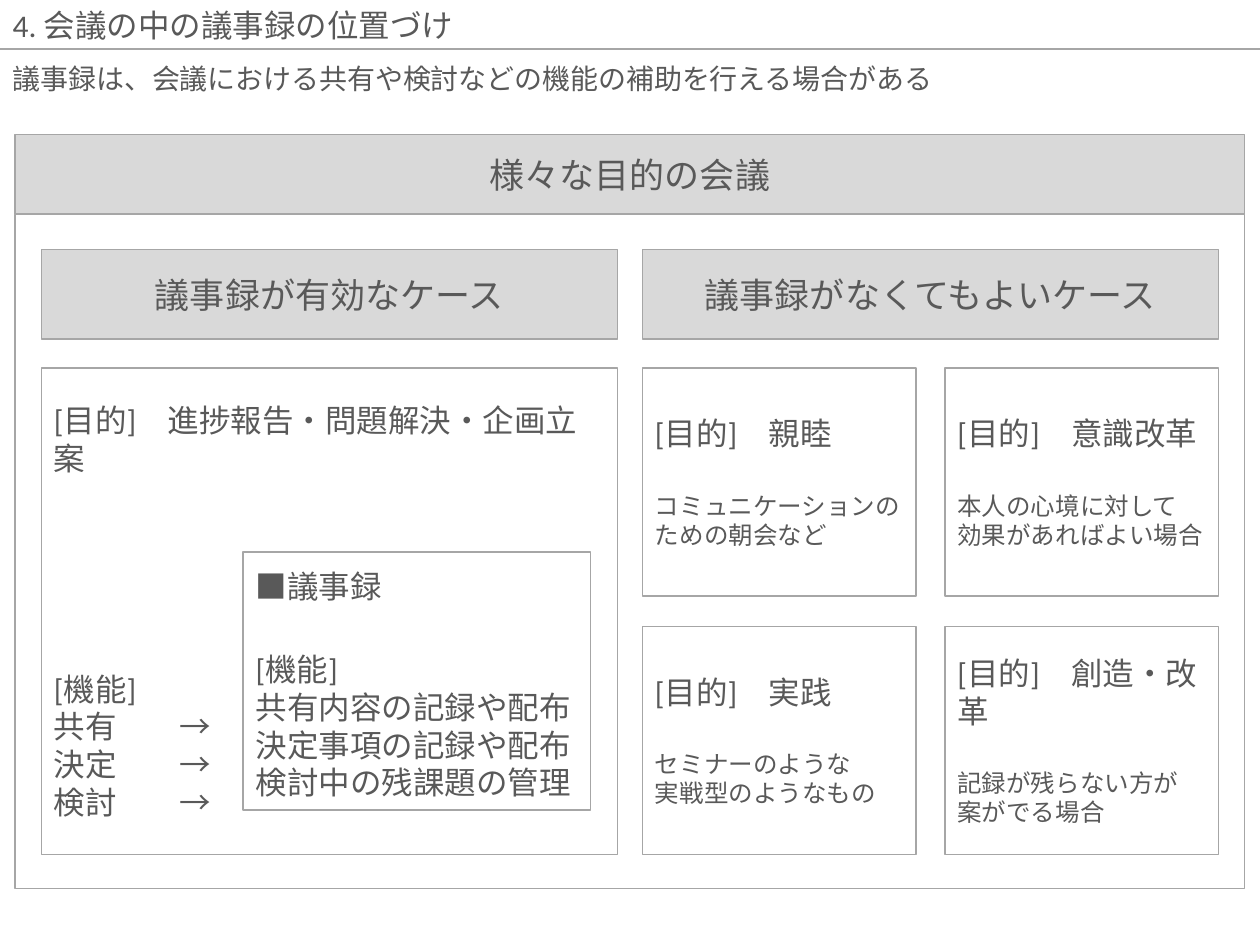
"""Build a slide on where minutes fit among meetings."""
from dataclasses import dataclass
from typing import Optional

from lxml import etree
from pptx import Presentation
from pptx import util as u
from pptx.dml.color import RGBColor
from pptx.enum import shapes, text
from pptx.oxml.ns import qn


@dataclass(frozen=True)
class Theme:
    """Colours, font and type sizes."""
    ink: RGBColor = RGBColor.from_string("595959")
    edge: RGBColor = RGBColor.from_string("A6A6A6")
    band: RGBColor = RGBColor.from_string("D9D9D9")
    font: str = "Calibri"
    head: int = 20
    main: int = 18
    lead: int = 16
    note: int = 14
    row: int = 22
    rule: float = 0.75


@dataclass(frozen=True)
class Box:
    """Place and size in inches."""
    x: float
    y: float
    w: float
    h: float


@dataclass(frozen=True)
class Line:
    """One paragraph with its size and the space above it."""
    words: str
    size: int
    gap: float = 0


@dataclass(frozen=True)
class Case:
    """A kind of meeting that needs no minutes."""
    aim: str
    notes: tuple[str, str]


T = Theme()
LEFT, RIGHT, WIDE = 0.33, 5.1, 4.57
TOP, TALL = 2.92, 3.86
CARD_W, CARD_H = 2.17, 1.81
STEP_X, STEP_Y = WIDE - CARD_W, TALL - CARD_H
HEADS = ("議事録が有効なケース", "議事録がなくてもよいケース")
TASKS = ("共有", "決定", "検討")
ROLES = ("共有内容の記録や配布", "決定事項の記録や配布", "検討中の残課題の管理")
CASES = (
    Case("親睦", ("コミュニケーションの", "ための朝会など")),
    Case("意識改革", ("本人の心境に対して", "効果があればよい場合")),
    Case("実践", ("セミナーのような", "実戦型のようなもの")),
    Case("創造・改革", ("記録が残らない方が", "案がでる場合")),
)


def place(item, box: Box) -> None:
    """Move and size a shape."""
    item.left, item.top = u.Inches(box.x), u.Inches(box.y)
    item.width, item.height = u.Inches(box.w), u.Inches(box.h)


def write(frame, lines: list[Line], align=text.PP_ALIGN.LEFT,
          anchor=text.MSO_ANCHOR.MIDDLE) -> None:
    """Fill a text frame and format its runs."""
    frame.text = "\n".join(line.words for line in lines)
    frame.word_wrap = True
    frame.auto_size = text.MSO_AUTO_SIZE.NONE
    frame.vertical_anchor = anchor
    for para, line in zip(frame.paragraphs, lines):
        para.alignment = align
        para.space_before = u.Pt(line.gap)
        for run in para.runs:
            run.font.name = T.font
            run.font.size = u.Pt(line.size)
            run.font.color.rgb = T.ink


def panel(slide, box: Box, fill: Optional[RGBColor] = None):
    """Draw an outlined rectangle."""
    rect = slide.shapes.add_shape(shapes.MSO_SHAPE.RECTANGLE, 0, 0, 0, 0)
    place(rect, box)
    rect.shadow.inherit = False
    rect.line.color.rgb = T.edge
    rect.line.width = u.Pt(T.rule)
    if fill is None:
        rect.fill.background()
    else:
        rect.fill.solid()
        rect.fill.fore_color.rgb = fill
    return rect


def banner(slide, box: Box, words: str) -> None:
    """Draw a shaded heading."""
    rect = panel(slide, box, T.band)
    write(rect.text_frame, [Line(words, T.head)], text.PP_ALIGN.CENTER)


def card(slide, box: Box, case: Case) -> None:
    """Draw one case with its aim and notes."""
    first, last = case.notes
    write(panel(slide, box).text_frame, [
        Line(f"[目的]\u3000{case.aim}".replace("\u3000", "　"), T.main),
        Line(first, T.note, T.row), Line(last, T.note)])


def header(slide) -> None:
    """Set the title, the lead sentence and the rule between them."""
    title, body = slide.shapes.title, slide.placeholders[1]
    place(title, Box(0, 0, 10, 0.39))
    write(title.text_frame, [Line("4. 会議の中の議事録の位置づけ", T.main)])
    place(body, Box(0, 0.39, 10, 5.91))
    body.text_frame.margin_top = u.Inches(0.1)
    write(body.text_frame, [Line(
        "議事録は、会議における共有や検討などの機能の補助を行える場合がある",
        T.lead)], anchor=text.MSO_ANCHOR.TOP)
    props = body.text_frame.paragraphs[0]._p.get_or_add_pPr()
    props.set("marL", "0")
    props.set("indent", "0")
    etree.SubElement(props, qn("a:buNone"))
    rule = slide.shapes.add_connector(
        shapes.MSO_CONNECTOR.STRAIGHT, 0, u.Inches(0.39),
        u.Inches(10), u.Inches(0.39))
    rule.line.color.rgb = T.edge
    rule.line.width = u.Pt(T.rule)
    etree.SubElement(rule._element.spPr, qn("a:effectLst"))


def useful(slide) -> None:
    """Draw the case in which minutes help."""
    rect = panel(slide, Box(LEFT, TOP, WIDE, TALL))
    write(rect.text_frame, [
        Line("[目的]　進捗報告・問題解決・企画立案", T.main),
        Line("[機能]", T.main, 5 * T.row),
        *(Line(f"{task}\t→", T.main) for task in TASKS)])
    inner = panel(slide, Box(1.93, 4.38, 2.76, 2.05)).text_frame
    inner.margin_top = u.Inches(0.12)
    write(inner, [Line("■議事録", T.main)], anchor=text.MSO_ANCHOR.TOP)
    roles = slide.shapes.add_textbox(0, 0, 0, 0)
    place(roles, Box(1.93, TOP, 2.99, TALL))
    roles.text_frame.margin_bottom = u.Inches(0.42)
    write(roles.text_frame,
          [Line(words, T.main) for words in ("[機能]", *ROLES)],
          anchor=text.MSO_ANCHOR.BOTTOM)


def main() -> None:
    """Build and save the slide."""
    deck = Presentation()
    deck.slide_width, deck.slide_height = u.Inches(10), u.Inches(7.5)
    slide = deck.slides.add_slide(deck.slide_layouts[1])
    header(slide)
    panel(slide, Box(0.12, 1.7, 9.76, 5.35))
    banner(slide, Box(0.12, 1.07, 9.76, 0.63), "様々な目的の会議")
    for x, words in zip((LEFT, RIGHT), HEADS):
        banner(slide, Box(x, 1.98, WIDE, 0.71), words)
    useful(slide)
    for i, case in enumerate(CASES):
        row, col = divmod(i, 2)
        card(slide, Box(RIGHT + col * STEP_X, TOP + row * STEP_Y,
                        CARD_W, CARD_H), case)
    deck.save("out.pptx")


if __name__ == "__main__":
    main()
